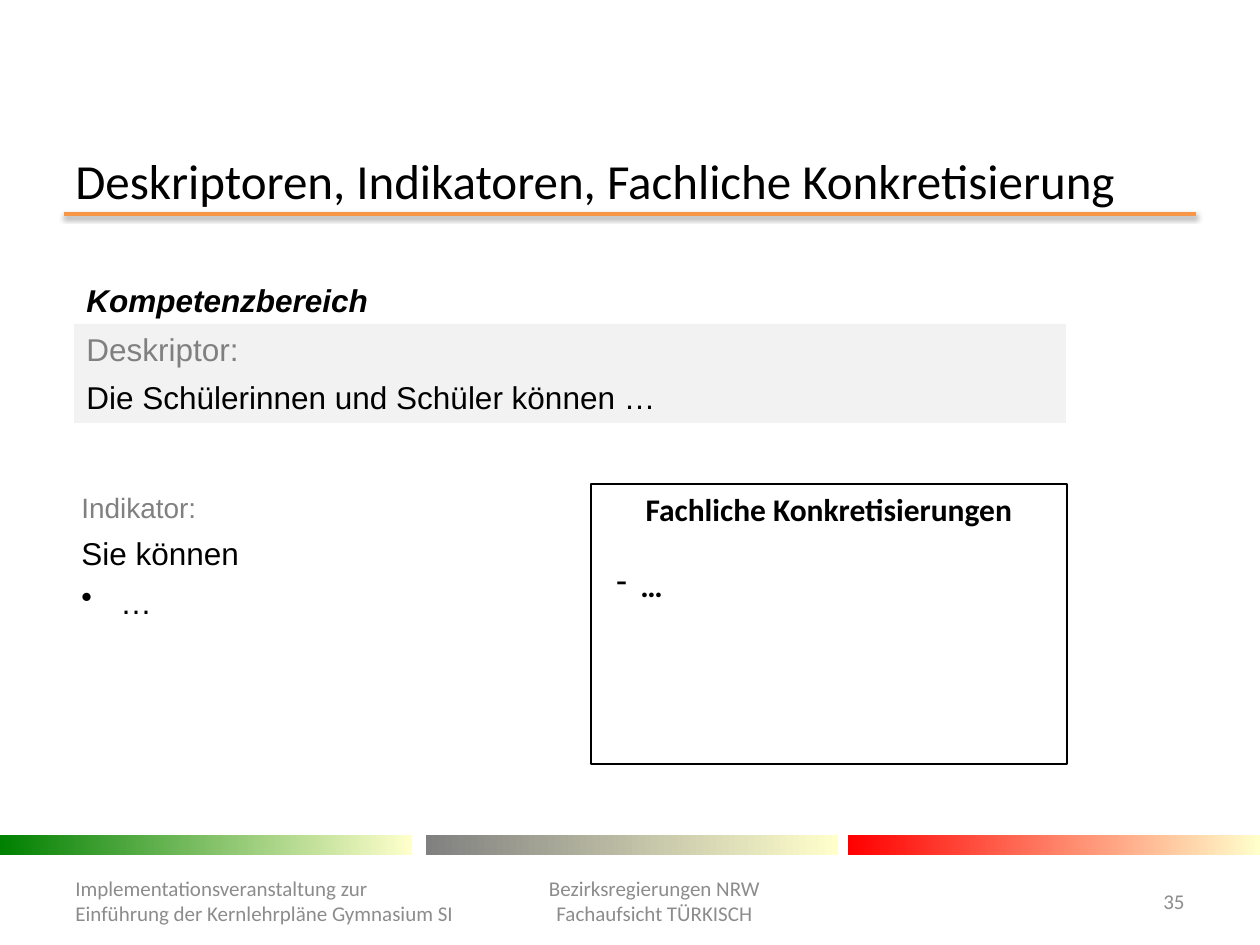
from lxml import etree
from pptx import Presentation
from pptx.dml.color import RGBColor
from pptx.enum.shapes import MSO_CONNECTOR, MSO_SHAPE
from pptx.enum.text import MSO_ANCHOR, PP_ALIGN
from pptx.oxml import parse_xml
from pptx.oxml.ns import qn
from pptx.util import Pt

SCALE = 914400 / 126
DRAWING_NS = "http://schemas.openxmlformats.org/drawingml/2006/main"
STRAIGHT, RECTANGLE = MSO_CONNECTOR.STRAIGHT, MSO_SHAPE.RECTANGLE
TOP, MIDDLE = MSO_ANCHOR.TOP, MSO_ANCHOR.MIDDLE
CENTER, RIGHT = PP_ALIGN.CENTER, PP_ALIGN.RIGHT

BLACK, GRAY, FOOTER_GRAY = "000000", "808080", "8C8C8C"
FOOTER = {"size": 12, "color": FOOTER_GRAY}
BODY = {"font": "Arial", "after": 6}
BOLD = {"bold": True}

# Left, top, width, height in px; paragraphs as (text, format); frame options
BOXES = [
    ((63, 155, 1134, 49),
     [("Deskriptoren, Indikatoren, Fachliche Konkretisierung", {"size": 28})],
     {"anchor": MIDDLE}),
    ((74, 275, 310, 50),
     [("Kompetenzbereich", {"font": "Arial", "bold": True, "italic": True})],
     {"wrap": False}),
    ((74, 324, 992, 99),
     [("Deskriptor:", {**BODY, "color": GRAY}),
      ("Die Schülerinnen und Schüler können …", {"font": "Arial"})],
     {"fill": "F2F2F2"}),
    ((69, 484, 1002, 242),
     [("Indikator:", {**BODY, "size": 16, "color": GRAY}),
      ("Sie können", BODY),
      ("…", {**BODY, "bullet": "•", "margin": 39, "hanging": 39})],
     {}),
    ((591, 484, 476, 280),
     [("Fachliche Konkretisierungen", {**BOLD, "align": CENTER}),
      ("…", {**BOLD, "before": 22, "bullet": "-", "margin": 37, "hanging": 24})],
     {"line": BLACK}),
    ((63, 876, 408, 50),
     [("Implementationsveranstaltung zur", FOOTER),
      ("Einführung der Kernlehrpläne Gymnasium SI", FOOTER)],
     {"anchor": MIDDLE}),
    ((471, 856, 367, 89),
     [("Bezirksregierungen NRW", {**FOOTER, "align": CENTER}),
      ("Fachaufsicht TÜRKISCH", {**FOOTER, "align": CENTER})],
     {"anchor": MIDDLE}),
    ((1116, 876, 81, 50), [("35", {**FOOTER, "align": RIGHT})],
     {"anchor": MIDDLE}),
]

BAR_TOP, BAR_WIDTH, BAR_HEIGHT = 835, 412, 20
BAR_END_COLOR = "FFFFCC"
BARS = [(0, "008000"), (426, "808080"), (848, "FF0000")]

RULE_LEFT, RULE_RIGHT, RULE_Y = 64, 1196, 214
RULE_SHADOW = f"""<a:effectLst xmlns:a="{DRAWING_NS}">
  <a:outerShdw blurRad="{Pt(3.1)}" dist="{Pt(1.6)}" dir="5400000" rotWithShape="0">
    <a:srgbClr val="000000"><a:alpha val="38000"/></a:srgbClr>
  </a:outerShdw>
</a:effectLst>"""


def px(length):
    return round(length * SCALE)


def rgb(color):
    return RGBColor.from_string(color)


def add_rectangle(slide, place):
    shape = slide.shapes.add_shape(RECTANGLE, *map(px, place))
    shape.shadow.inherit = False
    shape.line.fill.background()
    return shape


def add_bar(slide, left, color):
    bar = add_rectangle(slide, (left, BAR_TOP, BAR_WIDTH, BAR_HEIGHT))
    bar.fill.gradient()
    bar.fill.gradient_angle = 0
    for stop, stop_color in zip(bar.fill.gradient_stops, (color, BAR_END_COLOR)):
        stop.color.rgb = rgb(stop_color)


def add_rule(slide):
    rule = slide.shapes.add_connector(
        STRAIGHT, px(RULE_LEFT), px(RULE_Y), px(RULE_RIGHT), px(RULE_Y))
    rule.line.color.rgb = rgb("F79646")
    rule.line.width = Pt(2)
    rule._element.spPr.append(parse_xml(RULE_SHADOW))


def add_bullet(paragraph, bullet, margin, hanging):
    properties = paragraph._p.get_or_add_pPr()
    properties.set("marL", str(px(margin)))
    properties.set("indent", str(-px(hanging)))
    etree.SubElement(properties, qn("a:buChar"), char=bullet)


def fill_paragraph(paragraph, text, style):
    paragraph.alignment = style.get("align")
    paragraph.space_before = Pt(style.get("before", 0))
    paragraph.space_after = Pt(style.get("after", 0))
    if "bullet" in style:
        add_bullet(paragraph, style["bullet"], style["margin"], style["hanging"])
    run = paragraph.add_run()
    run.text = text
    font = run.font
    font.name = style.get("font", "Calibri")
    font.size = Pt(style.get("size", 18))
    font.bold = style.get("bold", False)
    font.italic = style.get("italic", False)
    font.color.rgb = rgb(style.get("color", BLACK))


def add_box(slide, place, paragraphs, options):
    if "fill" in options or "line" in options:
        box = add_rectangle(slide, place)
        if "fill" in options:
            box.fill.solid()
            box.fill.fore_color.rgb = rgb(options["fill"])
        else:
            box.fill.background()
        if "line" in options:
            box.line.color.rgb = rgb(options["line"])
            box.line.width = Pt(0.75)
    else:
        box = slide.shapes.add_textbox(*map(px, place))
    frame = box.text_frame
    frame.word_wrap = options.get("wrap", True)
    frame.vertical_anchor = options.get("anchor", TOP)
    for index, (text, style) in enumerate(paragraphs):
        paragraph = frame.add_paragraph() if index else frame.paragraphs[0]
        fill_paragraph(paragraph, text, style)


def main():
    presentation = Presentation()
    presentation.slide_width, presentation.slide_height = px(1260), px(945)
    slide = presentation.slides.add_slide(presentation.slide_layouts[6])
    add_rule(slide)
    for left, color in BARS:
        add_bar(slide, left, color)
    for place, paragraphs, options in BOXES:
        add_box(slide, place, paragraphs, options)
    presentation.save("out.pptx")


if __name__ == "__main__":
    main()
